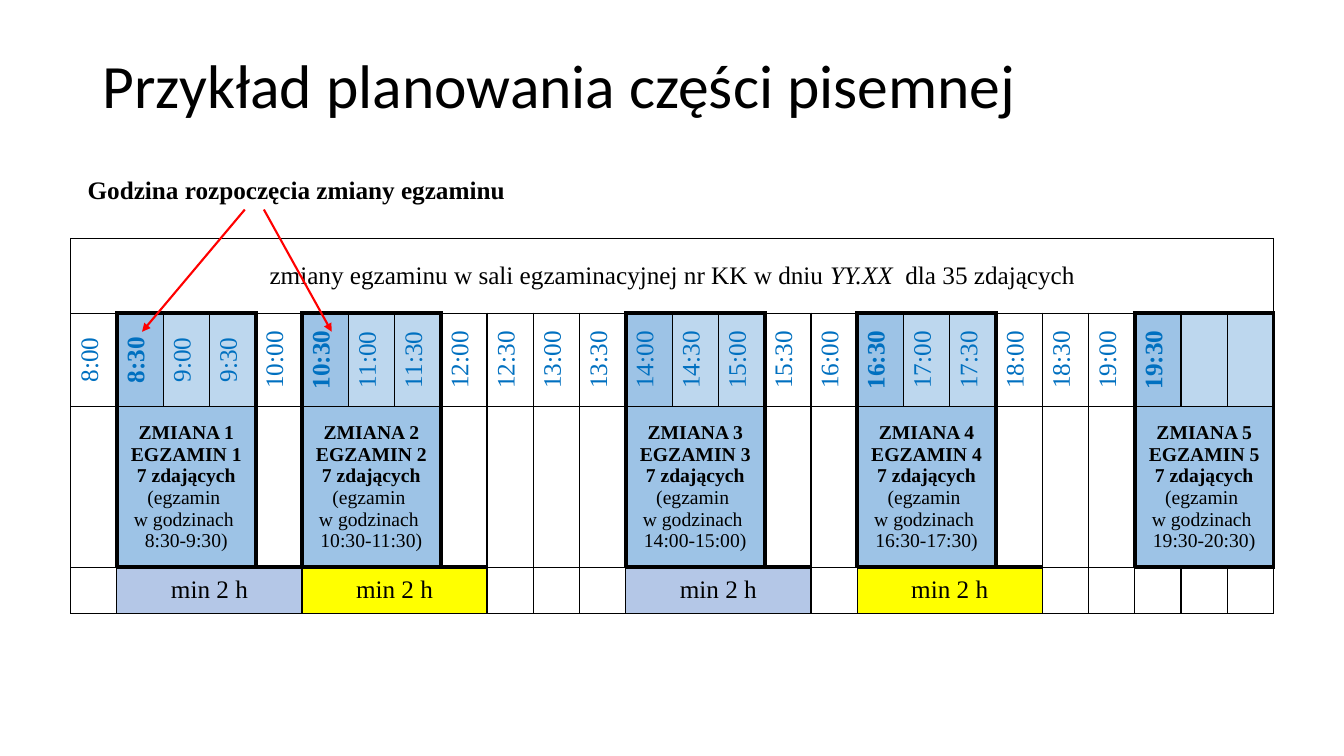
from lxml.etree import SubElement
from pptx import Presentation
from pptx.dml.color import RGBColor
from pptx.enum.shapes import MSO_CONNECTOR as Connector
from pptx.enum.text import MSO_ANCHOR as Anchor, PP_ALIGN as Align
from pptx.oxml.ns import qn
from pptx.util import Cm, Pt

TITLE = "Przykład planowania części pisemnej"
LABEL = "Godzina rozpoczęcia zmiany egzaminu"
HEADER = [("zmiany egzaminu w sali egzaminacyjnej nr KK w dniu ", ""),
          ("YY.XX  ", "i"), ("dla 35 zdających", "")]
TIMES = [f"{8 + half // 2}:{half % 2 * 3}0" for half in range(24)]
SHIFTS = [
    (1, "8:30-9:30)"),
    (5, "10:30-11:30)"),
    (12, "14:00-15:00)"),
    (17, "16:30-17:30)"),
    (23, "19:30-20:30)"),
]
REGULAR_START = "14:00"
BREAK = "min 2 h"
BREAK_COLORS = ["B4C7E7", "FFFF00", "B4C7E7", "FFFF00"]
ARROWS = [((6.17, 5.28), (3.58, 8.36)), ((6.65, 5.28), (8.36, 8.36))]

BLACK, WHITE, BLUE, RED = "000000", "FFFFFF", "0070C0", "FF0000"
SHIFT_FILL, HOUR_FILL = "9DC3E6", "BDD7EE"
SERIF = "Times New Roman"
COLUMNS, SHIFT_SPAN, BREAK_SPAN = 26, 3, 4
TABLE_LEFT, TABLE_TOP, TABLE_WIDTH = 1.78, 6.01, 30.33
ROW_HEIGHTS = [1.88, 2.36, 4.04, 1.17]
THIN, THICK = 1, 3

STARTS = [start for start, hours in SHIFTS]
SHIFT_COLUMNS = {start + step for start in STARTS for step in range(SHIFT_SPAN)}
SHIFT_EDGES = {start + step for start in STARTS for step in (0, SHIFT_SPAN)}
BREAK_COLUMNS = {start + step for start in STARTS for step in range(BREAK_SPAN)}


def color(value):
    return RGBColor.from_string(value)


def write(frame, paragraphs, size=18, font=SERIF, ink=BLACK, align=Align.CENTER, spacing=None):
    frame.word_wrap = True
    for index, parts in enumerate(paragraphs):
        paragraph = frame.paragraphs[0] if index == 0 else frame.add_paragraph()
        paragraph.alignment = align
        if spacing:
            paragraph.line_spacing = spacing
        for text, style in parts:
            for number, line in enumerate(text.split("\n")):
                if number:
                    paragraph.add_line_break()
                run = paragraph.add_run()
                run.text = line
                run.font.name = font
                run.font.size = Pt(size)
                run.font.bold = "b" in style
                run.font.italic = "i" in style
                run.font.color.rgb = color(ink)


def add_text(shapes, text, left, top, width, height, anchor=Anchor.TOP, style="", **form):
    box = shapes.add_textbox(Cm(left), Cm(top), Cm(width), Cm(height))
    box.text_frame.vertical_anchor = anchor
    write(box.text_frame, [[(text, style)]], align=Align.LEFT, **form)


def add_arrow(shapes, start, end):
    arrow = shapes.add_connector(Connector.STRAIGHT, *map(Cm, start + end))
    arrow.line.color.rgb = color(RED)
    arrow.line.width = Pt(1.5)
    SubElement(arrow.line._get_or_add_ln(), qn("a:tailEnd"), type="triangle")
    SubElement(arrow._element.spPr, qn("a:effectLst"))


def set_borders(cell, row, column, span):
    in_shift_rows = row in (1, 2)
    thick = {
        "L": in_shift_rows and column in SHIFT_EDGES,
        "R": in_shift_rows and column + span in SHIFT_EDGES,
        "T": (row == 1 and column in SHIFT_COLUMNS) or (row == 3 and column in BREAK_COLUMNS),
        "B": row == 2 and column in SHIFT_COLUMNS,
    }
    properties = cell._tc.get_or_add_tcPr()
    for side, heavy in thick.items():
        line = SubElement(properties, qn("a:ln" + side), w=str(Pt(THICK if heavy else THIN)))
        fill = SubElement(line, qn("a:solidFill"))
        SubElement(fill, qn("a:srgbClr"), val=BLACK)


def build_table(slide):
    table = slide.shapes.add_table(
        len(ROW_HEIGHTS), COLUMNS, Cm(TABLE_LEFT), Cm(TABLE_TOP),
        Cm(TABLE_WIDTH), Cm(sum(ROW_HEIGHTS))).table
    table.first_row = table.horz_banding = False
    for column in table.columns:
        column.width = Cm(TABLE_WIDTH / COLUMNS)
    for row, height in zip(table.rows, ROW_HEIGHTS):
        row.height = Cm(height)

    spans = {(0, 0): COLUMNS}
    fills = {(1, column): HOUR_FILL for column in SHIFT_COLUMNS}
    for start in STARTS:
        spans[2, start] = SHIFT_SPAN
        fills[1, start] = fills[2, start] = SHIFT_FILL
    for start, fill in zip(STARTS, BREAK_COLORS):
        spans[3, start] = BREAK_SPAN
        fills[3, start] = fill

    for row in range(len(ROW_HEIGHTS)):
        for column in range(COLUMNS):
            cell = table.cell(row, column)
            span = spans.get((row, column), 1)
            set_borders(cell, row, column, span)
            cell.fill.solid()
            cell.fill.fore_color.rgb = color(fills.get((row, column), WHITE))
            cell.vertical_anchor = Anchor.MIDDLE
            if span > 1:
                cell.merge(table.cell(row, column + span - 1))

    write(table.cell(0, 0).text_frame, [HEADER])
    for column, time in enumerate(TIMES):
        cell = table.cell(1, column)
        cell._tc.get_or_add_tcPr().set("vert", "vert270")
        style = "b" if column in STARTS and time != REGULAR_START else ""
        write(cell.text_frame, [[(time, style)]], ink=BLUE)
    for number, (start, hours) in enumerate(SHIFTS, 1):
        write(table.cell(2, start).text_frame, [
            [(f"ZMIANA {number} EGZAMIN {number}", "b")],
            [("7 zdających", "b")],
            [("(egzamin \nw godzinach ", "")],
            [(hours, "")],
        ], size=14)
    for start, fill in zip(STARTS, BREAK_COLORS):
        write(table.cell(3, start).text_frame, [[(BREAK, "")]])


def main():
    presentation = Presentation()
    presentation.slide_width, presentation.slide_height = Cm(33.87), Cm(19.05)
    slide = presentation.slides.add_slide(presentation.slide_layouts[6])
    build_table(slide)
    callout = slide.shapes.add_group_shape()
    add_text(callout.shapes, LABEL, 1.96, 4.27, 14.58, 1.02, style="b")
    for start, end in ARROWS:
        add_arrow(callout.shapes, start, end)
    add_text(slide.shapes, TITLE, 2.33, 1.01, 29.21, 2.45, anchor=Anchor.MIDDLE,
             size=44, font="Calibri", spacing=0.9)
    presentation.save("out.pptx")


if __name__ == "__main__":
    main()
